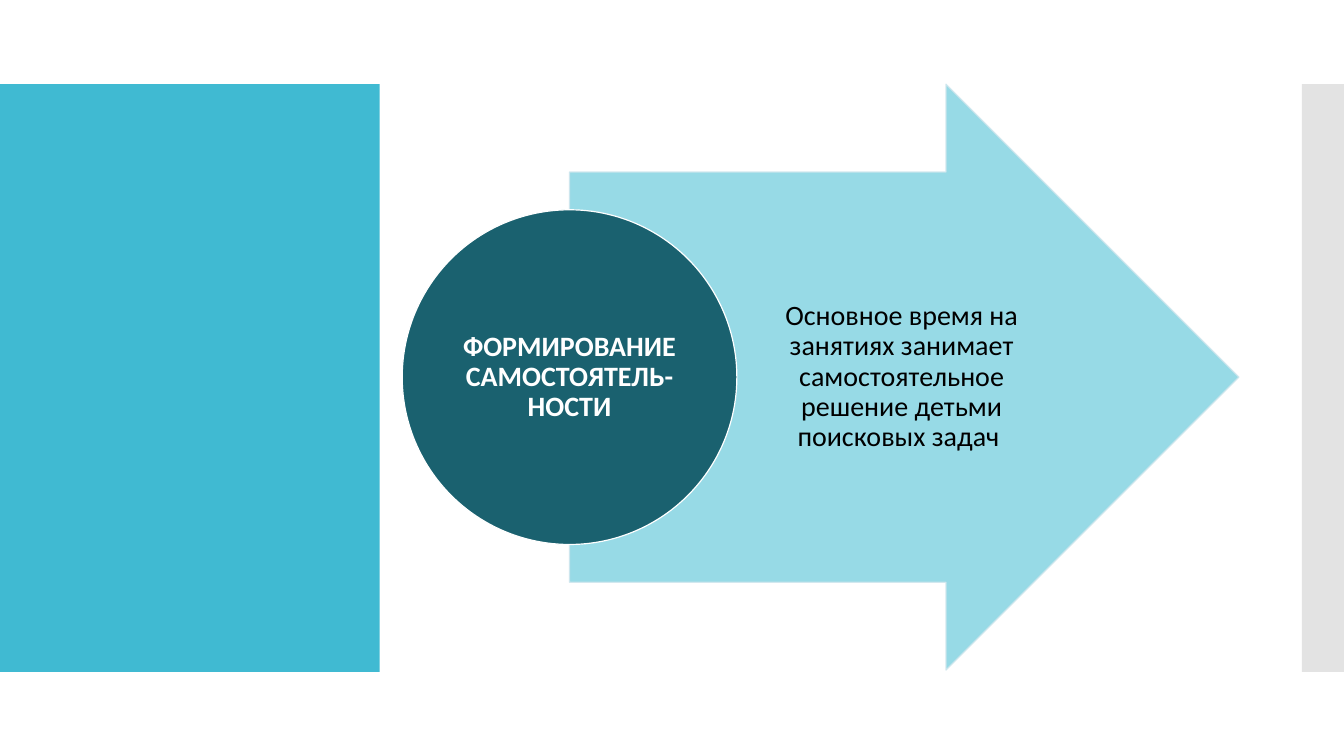
from dataclasses import dataclass

from lxml.etree import SubElement as Sub
from pptx import Presentation
from pptx.dml.color import RGBColor as RGB
from pptx.enum.shapes import MSO_SHAPE as Shape
from pptx.enum.text import MSO_ANCHOR as Anchor, PP_ALIGN as Align
from pptx.oxml.ns import qn
from pptx.util import Inches, Pt


@dataclass(frozen=True)
class Theme:
    """Colours and type of the slide."""
    teal: str = "40BAD2"
    gray: str = "C8C8C8"
    pale: str = "8CD6E4"
    edge: str = "CFE7EE"
    deep: str = "1A616F"
    white: str = "FFFFFF"
    black: str = "000000"
    font: str = "Calibri"
    size: int = 20
    line: float = 0.85


LOOK = Theme()
COLS, ROWS = 160, 90
CELL = Inches(7.5) / ROWS
MID = 44.9


def place(col, row, wide, high):
    """Turn grid cells into slide lengths."""
    return [round(n * CELL) for n in (col, row, wide, high)]


def center(col, wide, high):
    """Place a box that is centred on the middle row."""
    return place(col, MID - high / 2, wide, high)


def paint(fill, color, alpha=100):
    """Set a solid colour with its opacity in percent."""
    fill.solid()
    fill.fore_color.rgb = RGB.from_string(color)
    if alpha < 100:
        tone = fill._xPr.find(qn("a:solidFill"))[0]
        Sub(tone, qn("a:alpha"), val=str(alpha * 1000))


def draw(slide, kind, box, color, edge=None, alpha=100):
    """Add a flat shape, with an outline if an edge colour is given."""
    shape = slide.shapes.add_shape(kind, *box)
    shape.shadow.inherit = False
    paint(shape.fill, color, alpha)
    if edge:
        shape.line.width = Pt(LOOK.line)
        paint(shape.line.fill, edge, alpha)
    else:
        shape.line.fill.background()
    return shape


def write(slide, box, text, color, pads, bold=False):
    """Add centred text with the given insets in inches."""
    frame = slide.shapes.add_textbox(*box).text_frame
    frame.word_wrap = True
    frame.vertical_anchor = Anchor.MIDDLE
    (frame.margin_left, frame.margin_top,
     frame.margin_right, frame.margin_bottom) = map(Inches, pads)
    para = frame.paragraphs[0]
    para.alignment = Align.CENTER
    para.line_spacing = 0.9
    run = para.add_run()
    run.text = text
    run.font.name = LOOK.font
    run.font.size = Pt(LOOK.size)
    run.font.bold = bold
    run.font.color.rgb = RGB.from_string(color)


def main():
    """Build the slide and save it."""
    deck = Presentation()
    deck.slide_width = round(COLS * CELL)
    deck.slide_height = round(ROWS * CELL)
    slide = deck.slides.add_slide(deck.slide_layouts[6])

    draw(slide, Shape.RECTANGLE, place(0, 10, 45.2, 70), LOOK.teal)
    draw(slide, Shape.RECTANGLE, place(155, 10, 5, 70), LOOK.gray, alpha=50)

    hub, disk, label = 67.8, 39.84, 28.2
    arrow = draw(slide, Shape.RIGHT_ARROW, center(hub, 79.7, 69.75),
                 LOOK.pale, LOOK.edge, 90)
    arrow.adjustments[0] = 0.7
    arrow.adjustments[1] = 0.5
    write(slide, center(hub + disk / 2, 38.9, 48.7),
          "Основное время на занятиях занимает самостоятельное "
          "решение детьми поисковых задач ",
          LOOK.black, (0.06, 0.01, 0.03, 0.01))

    draw(slide, Shape.OVAL, center(hub - disk / 2, disk, disk),
         LOOK.deep, LOOK.white)
    write(slide, center(hub - label / 2, label, label),
          "ФОРМИРОВАНИЕ САМОСТОЯТЕЛЬ-НОСТИ",
          LOOK.white, (0.01,) * 4, bold=True)

    deck.save("out.pptx")


if __name__ == "__main__":
    main()
